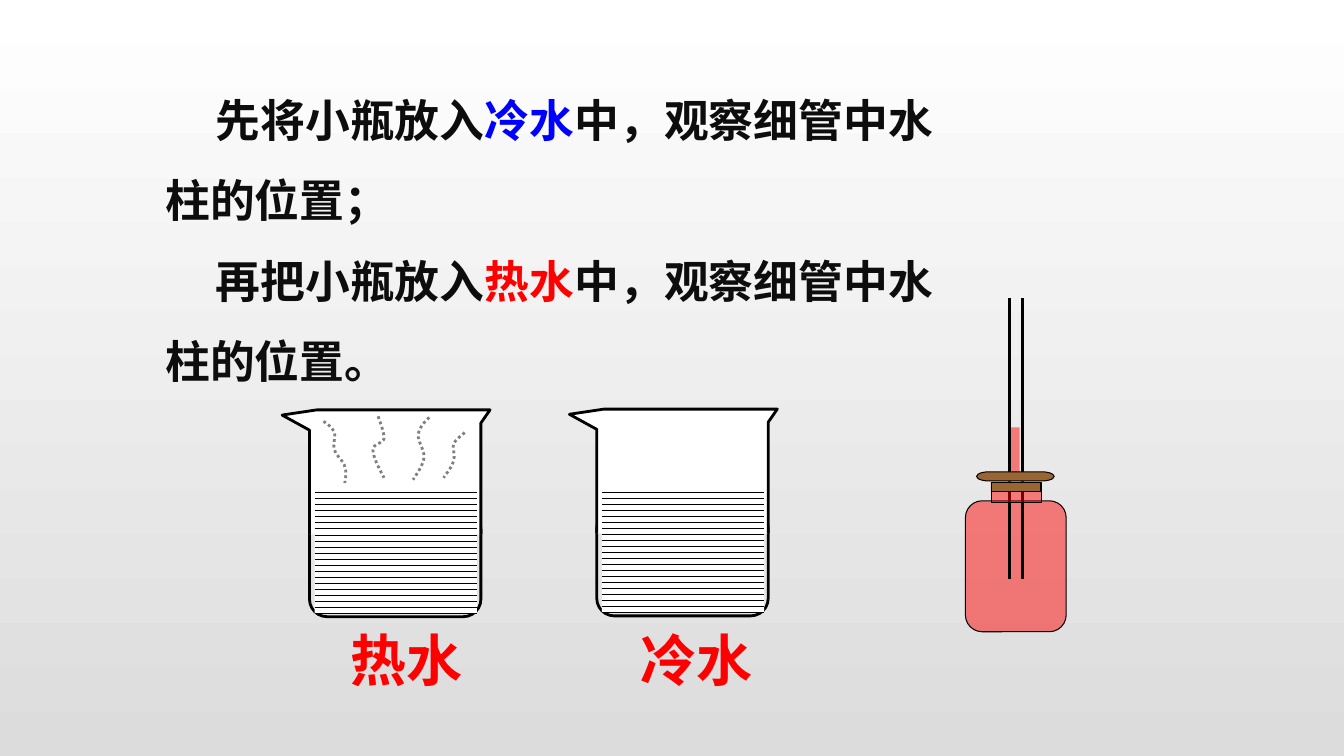
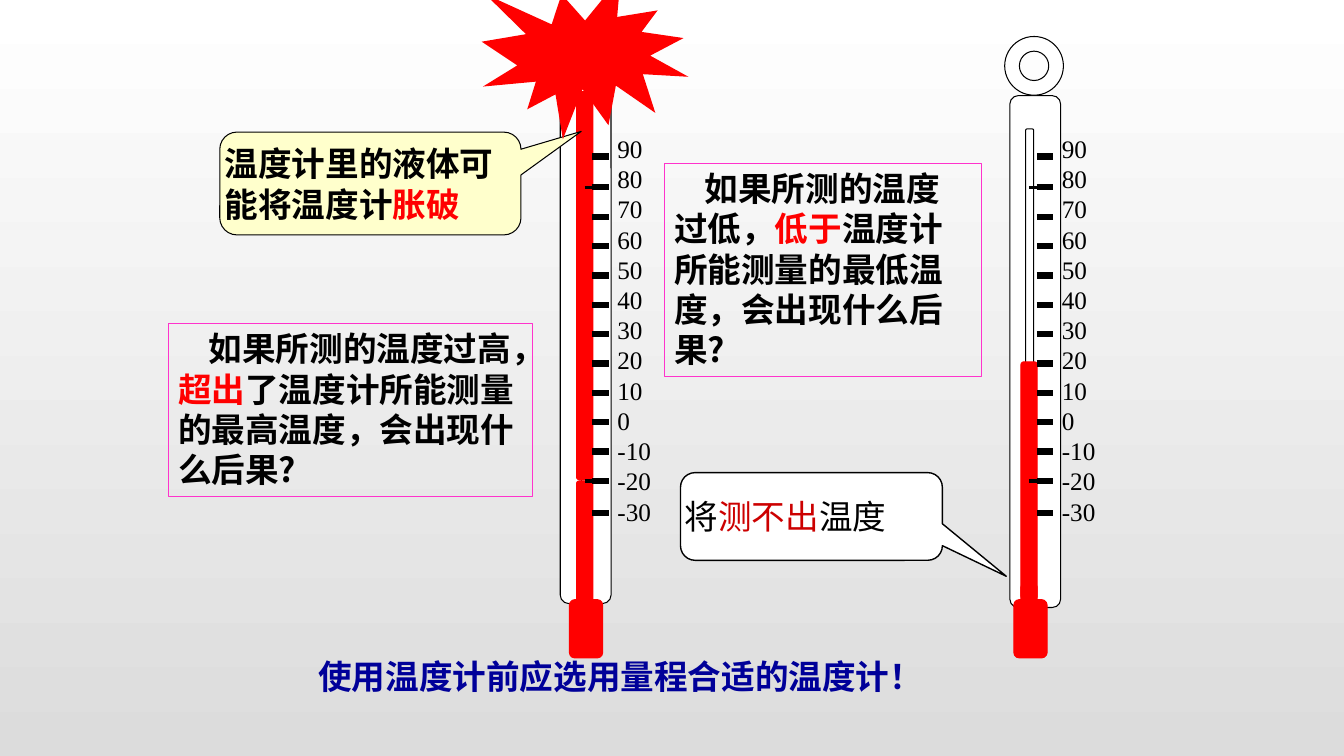
from dataclasses import dataclass
from typing import Optional

from lxml.etree import SubElement
from pptx import Presentation
from pptx.dml.color import RGBColor
from pptx.enum.dml import MSO_LINE, MSO_PATTERN
from pptx.enum.shapes import MSO_CONNECTOR, MSO_SHAPE
from pptx.enum.text import MSO_ANCHOR, MSO_AUTO_SIZE, PP_ALIGN
from pptx.oxml.ns import qn
from pptx.util import Cm, Pt

Point = tuple[float, float]


@dataclass(frozen=True)
class Theme:
    black: str = "000000"
    white: str = "FFFFFF"
    backdrop: str = "DCDCDC"
    ink: str = "0D0D0D"
    red: str = "FF0000"
    dark_red: str = "CC0000"
    blue: str = "0000FF"
    navy: str = "000099"
    pink: str = "FF33CC"
    cream: str = "FFFFCC"
    cork: str = "996633"
    steam: str = "808080"
    chinese: str = "Noto Sans CJK SC"
    heading: str = "Arial"
    digits: str = "Times New Roman"
    label_size: float = 40
    body_size: float = 32
    note_size: float = 24
    scale_size: float = 18
    leading: float = 1.2


THEME = Theme()


@dataclass(frozen=True)
class Box:
    left: float
    top: float
    width: float
    height: float

    def lengths(self) -> tuple:
        return Cm(self.left), Cm(self.top), Cm(self.width), Cm(self.height)


@dataclass(frozen=True)
class Look:
    fill: Optional[str] = None
    line: Optional[str] = None
    weight: float = 0.75
    alpha: int = 100


@dataclass(frozen=True)
class Type:
    size: float
    color: str = THEME.black
    font: str = THEME.chinese
    bold: bool = True
    spacing: float = 1
    indent: float = 0


@dataclass(frozen=True)
class Span:
    text: str
    color: Optional[str] = None


@dataclass(frozen=True)
class Beaker:
    left: float
    top: float
    label: str
    label_left: float


@dataclass(frozen=True)
class Thermometer:
    axis: float
    case_left: float
    case_top: float
    liquids: tuple[tuple[float, float], ...]


@dataclass(frozen=True)
class Callout:
    box: Box
    fill: str
    weight: float
    tip: Point
    spans: list[Span]
    style: Type


@dataclass(frozen=True)
class Question:
    box: Box
    spans: list[Span]


NOTE = Type(THEME.note_size)
RED_LIQUID = Look(THEME.red, THEME.red)
OUTLINED = Look(THEME.white, THEME.black)

BEAKERS = [Beaker(7.8, 12.9, "热水", 8.59), Beaker(15.04, 12.88, "冷水", 15.9)]
BEAKER_RIM = [(0, 0.56), (0, -2.06), (-0.69, -2.44), (0.18, -2.57),
              (4.55, -2.57), (4.32, -2.24), (4.32, 0.56)]
STEAM = [
    [(9.53, 10.49), (9.6, 10.69), (9.68, 10.9), (9.68, 11.05), (9.65, 11.18),
     (9.4, 11.18), (9.4, 11.33), (9.4, 11.51), (9.53, 11.76), (9.68, 12.04)],
    [(10.82, 10.52), (10.69, 10.64), (10.57, 10.77), (10.54, 10.95), (10.52, 11.1),
     (10.69, 11.33), (10.69, 11.51), (10.67, 11.71), (10.54, 11.89), (10.41, 12.09)],
    [(8.15, 10.62), (8.28, 10.69), (8.38, 10.8), (8.43, 10.9), (8.46, 11.02),
     (8.38, 11.2), (8.43, 11.33), (8.46, 11.48), (8.66, 11.61), (8.69, 11.76),
     (8.74, 11.89), (8.71, 12.04), (8.69, 12.17)],
    [(11.71, 10.9), (11.61, 11), (11.48, 11.07), (11.43, 11.2), (11.4, 11.3),
     (11.48, 11.48), (11.43, 11.61), (11.4, 11.76), (11.28, 11.89), (11.18, 12.04)],
]
STEPS = [
    [Span("先将小瓶放入"), Span("冷水", THEME.blue), Span("中，观察细管中水柱的位置；")],
    [Span("再把小瓶放入"), Span("热水", THEME.red), Span("中，观察细管中水柱的位置。")],
]
THERMOMETERS = [
    Thermometer(14.73, 14.12, 2.31, ((12.12, 3.18), (2.31, 9.78))),
    Thermometer(25.93, 25.45, 2.41, ((14.73, 0.58), (9.12, 5.97))),
]
FIRST_TICK, TICK_STEP = 4.72, 0.74
TICKS = [3.94] + [FIRST_TICK + TICK_STEP * i for i in range(11)] + [12.93]
LONG_TICKS = (TICKS[1], TICKS[11])
CALLOUTS = [
    Callout(Box(17.15, 11.91, 6.6, 2.21), THEME.white, 1, (0.744, 0.682),
            [Span("将"), Span("测不出", THEME.dark_red), Span("温度")],
            Type(THEME.note_size, bold=False)),
    Callout(Box(5.54, 3.33, 7.59, 2.59), THEME.cream, 0.75, (0.7, -0.507),
            [Span("温度计里的液体可能将温度计"), Span("胀破", THEME.red)],
            Type(THEME.note_size, font=THEME.heading)),
]
QUESTIONS = [
    Question(Box(4.24, 8.15, 9.17, 4.37),
             [Span("如果所测的温度过高，"), Span("超出", THEME.red),
              Span("了温度计所能测量的最高温度，会出现什么后果?")]),
    Question(Box(16.74, 4.11, 8, 5.38),
             [Span("如果所测的温度过低，"), Span("低于", THEME.red),
              Span("温度计所能测量的最低温度，会出现什么后果?")]),
]


def rgb(value: str) -> RGBColor:
    return RGBColor.from_string(value)


def dress(shape, look: Look):
    shape.shadow.inherit = False
    if look.fill:
        shape.fill.solid()
        shape.fill.fore_color.rgb = rgb(look.fill)
        if look.alpha < 100:
            color = shape._element.spPr.find(qn("a:solidFill"))[0]
            SubElement(color, qn("a:alpha")).set("val", str(look.alpha * 1000))
    else:
        shape.fill.background()
    if look.line:
        shape.line.color.rgb = rgb(look.line)
        shape.line.width = Pt(look.weight)
    else:
        shape.line.fill.background()
    return shape


def draw(slide, kind: MSO_SHAPE, box: Box, look: Look):
    return dress(slide.shapes.add_shape(kind, *box.lengths()), look)


def draw_line(slide, start: Point, end: Point, weight: float) -> None:
    ends = [Cm(value) for value in start + end]
    line = slide.shapes.add_connector(MSO_CONNECTOR.STRAIGHT, *ends)
    line.line.color.rgb = rgb(THEME.black)
    line.line.width = Pt(weight)
    SubElement(line._element.spPr, qn("a:effectLst"))


def draw_outline(slide, points: list[Point], look: Look):
    first, *rest = [(Cm(x), Cm(y)) for x, y in points]
    builder = slide.shapes.build_freeform(*first)
    builder.add_line_segments(rest, close=False)
    return dress(builder.convert_to_shape(), look)


def sample_curve(nodes: list[Point], steps: int = 8) -> list[Point]:
    points = [nodes[0]]
    for start in range(0, len(nodes) - 1, 3):
        a, b, c, d = nodes[start:start + 4]
        for step in range(1, steps + 1):
            t = step / steps
            u = 1 - t
            weights = (u ** 3, 3 * u * u * t, 3 * u * t * t, t ** 3)
            points.append(tuple(sum(w * p[axis] for w, p in zip(weights, (a, b, c, d)))
                                for axis in (0, 1)))
    return points


def write(shape, paragraphs: list[list[Span]], style: Type,
          anchor: MSO_ANCHOR = MSO_ANCHOR.TOP) -> None:
    frame = shape.text_frame
    frame.word_wrap = True
    frame.auto_size = MSO_AUTO_SIZE.NONE
    frame.vertical_anchor = anchor
    for index, spans in enumerate(paragraphs):
        paragraph = frame.add_paragraph() if index else frame.paragraphs[0]
        properties = paragraph._p.get_or_add_pPr()
        properties.set("marL", "0")
        properties.set("indent", str(Cm(style.indent)))
        SubElement(properties, qn("a:buNone"))
        paragraph.alignment = PP_ALIGN.LEFT
        paragraph.space_before = Pt(0)
        paragraph.line_spacing = Pt(round(style.size * THEME.leading * style.spacing, 1))
        for span in spans:
            run = paragraph.add_run()
            run.text = span.text
            run.font.size = Pt(style.size)
            run.font.bold = style.bold
            run.font.color.rgb = rgb(span.color or style.color)
            run.font.name = style.font
            SubElement(run._r.get_or_add_rPr(), qn("a:ea")).set("typeface", THEME.chinese)


def place(shape, box: Box) -> None:
    shape.left, shape.top, shape.width, shape.height = box.lengths()


def draw_beaker(slide, beaker: Beaker) -> None:
    x, y = beaker.left, beaker.top
    draw(slide, MSO_SHAPE.FLOWCHART_ALTERNATE_PROCESS, Box(x, y, 4.32, 2.64),
         Look(line=THEME.black, weight=2))
    draw_outline(slide, [(x + dx, y + dy) for dx, dy in BEAKER_RIM],
                 Look(THEME.white, THEME.black, 2))
    water = draw(slide, MSO_SHAPE.RECTANGLE, Box(x + 0.13, y - 0.64, 4.09, 3.2), Look())
    water.fill.patterned()
    water.fill.pattern = MSO_PATTERN.DASHED_HORIZONTAL
    water.fill.fore_color.rgb = rgb(THEME.black)
    water.fill.back_color.rgb = rgb(THEME.white)
    label = slide.shapes.add_textbox(*Box(beaker.label_left, 15.65, 3.96, 2.08).lengths())
    write(label, [[Span(beaker.label)]], Type(THEME.label_size, THEME.red))


def draw_flask(slide) -> None:
    draw(slide, MSO_SHAPE.RECTANGLE, Box(25.45, 10.77, 0.25, 1.12), Look(THEME.red, alpha=48))
    draw(slide, MSO_SHAPE.ROUNDED_RECTANGLE, Box(24.33, 12.62, 2.54, 3.3),
         Look(THEME.red, THEME.black, alpha=48))
    for x in (25.45, 25.76):
        draw_line(slide, (x, 7.52), (x, 14.58), 2)
    draw(slide, MSO_SHAPE.FLOWCHART_TERMINATOR, Box(24.61, 11.89, 1.96, 0.23),
         Look(THEME.cork, THEME.black))
    draw(slide, MSO_SHAPE.RECTANGLE, Box(24.99, 12.14, 1.24, 0.51),
         Look(THEME.red, THEME.black, 0.25, 47))
    draw(slide, MSO_SHAPE.RECTANGLE, Box(24.97, 12.14, 1.24, 0.25),
         Look(THEME.cork, THEME.black, 0.25))


def draw_thermometer(slide, meter: Thermometer) -> None:
    axis = meter.axis
    rounded = MSO_SHAPE.ROUNDED_RECTANGLE
    draw(slide, rounded, Box(meter.case_left, meter.case_top, 1.28, 12.9), OUTLINED)
    draw(slide, rounded, Box(axis - 0.08, 3.25, 0.2, 12.07), OUTLINED)
    draw(slide, MSO_SHAPE.DONUT, Box(axis - 0.61, 0.92, 1.48, 1.48), OUTLINED)
    draw(slide, rounded, Box(axis - 0.38, 15.11, 0.84, 1.47), RED_LIQUID)
    for top, height in meter.liquids:
        draw(slide, rounded, Box(axis - 0.2, top, 0.41, height), RED_LIQUID)
    for y in LONG_TICKS:
        draw_line(slide, (axis, y), (axis + 0.61, y), 2.25)
    for y in TICKS:
        draw_line(slide, (axis + 0.2, y), (axis + 0.61, y), 4.5)
    scale = slide.shapes.add_textbox(*Box(axis + 0.58, 3.23, 1.9, 10.26).lengths())
    write(scale, [[Span(str(value))] for value in range(90, -31, -10)],
          Type(THEME.scale_size, font=THEME.digits, bold=False))


def build_experiment(deck) -> None:
    slide = deck.slides.add_slide(deck.slide_layouts[1])
    title = slide.shapes.title
    title._element.getparent().remove(title._element)
    steps = slide.placeholders[1]
    place(steps, Box(3.91, 1.52, 20.6, 8.15))
    write(steps, STEPS, Type(THEME.body_size, THEME.ink, spacing=1.5, indent=1.27))
    for beaker in BEAKERS:
        draw_beaker(slide, beaker)
    for nodes in STEAM:
        wisp = draw_outline(slide, sample_curve(nodes), Look(line=THEME.steam, weight=2))
        wisp.line.dash_style = MSO_LINE.ROUND_DOT
    draw_flask(slide)


def build_range(deck) -> None:
    slide = deck.slides.add_slide(deck.slide_layouts[5])
    place(slide.shapes.title, Box(7.77, 16.41, 15.98, 1.27))
    write(slide.shapes.title, [[Span("使用温度计前应选用量程合适的温度计！")]],
          Type(THEME.note_size, THEME.navy, THEME.heading))
    for meter in THERMOMETERS:
        draw_thermometer(slide, meter)
    for callout in CALLOUTS:
        bubble = draw(slide, MSO_SHAPE.ROUNDED_RECTANGULAR_CALLOUT, callout.box,
                      Look(callout.fill, THEME.black, callout.weight))
        bubble.adjustments[0], bubble.adjustments[1] = callout.tip
        bubble.text_frame.margin_left = bubble.text_frame.margin_right = Cm(0)
        write(bubble, [callout.spans], callout.style, MSO_ANCHOR.MIDDLE)
    draw(slide, MSO_SHAPE.EXPLOSION1, Box(12.14, -0.58, 5.21, 4.09), Look(THEME.red))
    for question in QUESTIONS:
        panel = draw(slide, MSO_SHAPE.RECTANGLE, question.box, Look(line=THEME.pink))
        write(panel, [question.spans], Type(THEME.note_size, indent=0.77))


def main() -> None:
    deck = Presentation()
    deck.slide_width, deck.slide_height = Cm(33.87), Cm(19.05)
    backdrop = deck.slide_master.background.fill
    backdrop.gradient()
    backdrop.gradient_angle = 270
    for stop, color in zip(backdrop.gradient_stops, (THEME.white, THEME.backdrop)):
        stop.color.rgb = rgb(color)
    build_experiment(deck)
    build_range(deck)
    deck.save("out.pptx")


if __name__ == "__main__":
    main()
